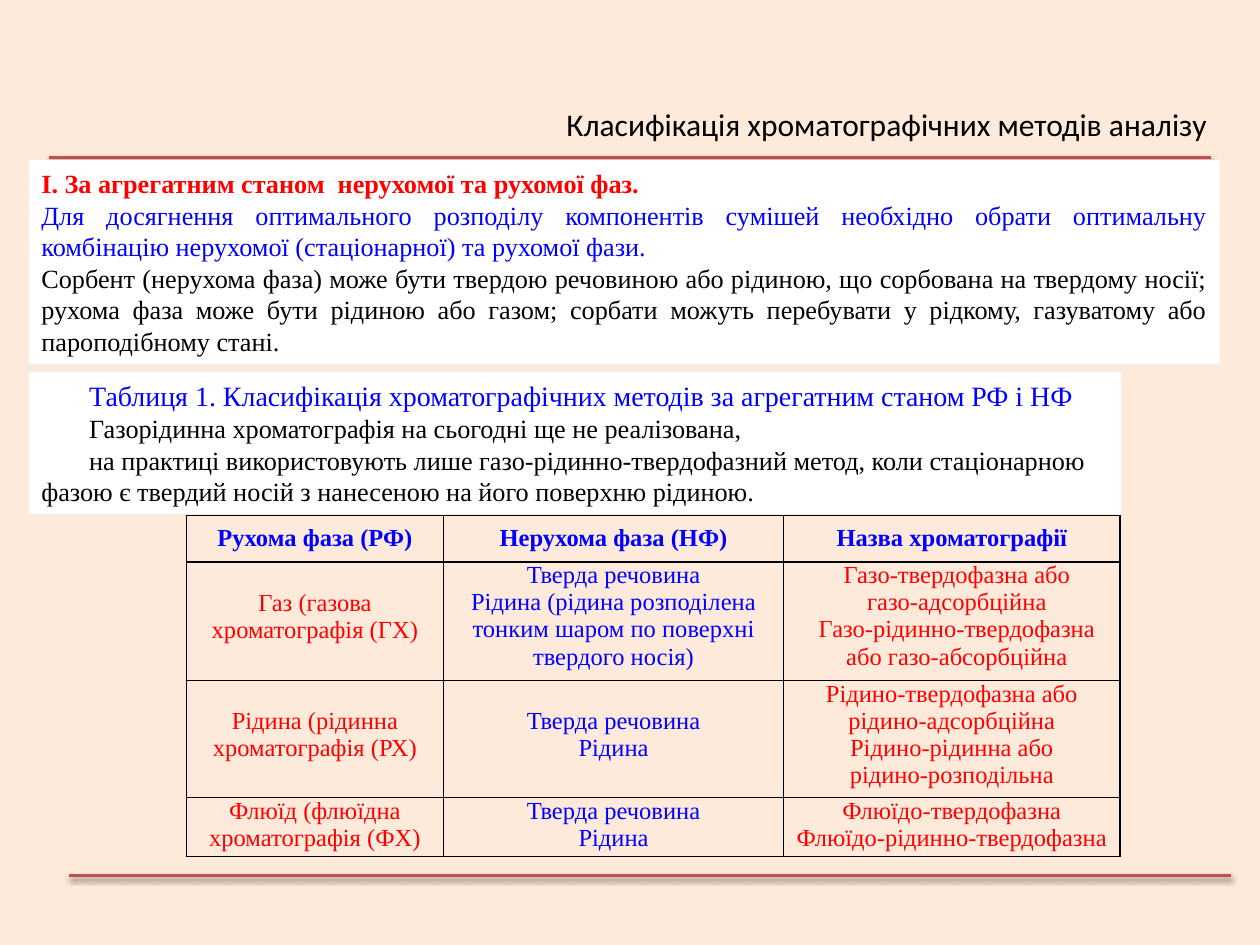
from pptx import Presentation
from pptx.dml.color import RGBColor
from pptx.enum.shapes import MSO_CONNECTOR, MSO_SHAPE
from pptx.enum.text import MSO_ANCHOR, MSO_AUTO_SIZE, PP_ALIGN
from pptx.oxml import parse_xml
from pptx.oxml.ns import nsdecls
from pptx.util import Inches, Pt

RED, BLUE, BLACK, WHITE = "FF0000", "0000FF", "000000", "FFFFFF"
SERIF = "Times New Roman"


def rgb(value):
    return RGBColor.from_string(value)


def write(p, text, size=14, color=BLACK, bold=False, font=SERIF,
          align=PP_ALIGN.LEFT, left=0, indent=0):
    p.alignment = align
    pPr = p._p.get_or_add_pPr()
    pPr.set("marL", str(Inches(left)))
    pPr.set("indent", str(Inches(indent)))
    p.text = text
    for r in p.runs:
        r.font.name = font
        r.font.size = Pt(size)
        r.font.bold = bold
        r.font.color.rgb = rgb(color)


def fill_frame(tf, lines, **style):
    for i, (text, extra) in enumerate(lines):
        p = tf.paragraphs[0] if i == 0 else tf.add_paragraph()
        write(p, text, **{**style, **extra})


class Deck:
    accent = "C0504D"
    background = "FDEADA"

    def __init__(self, prs):
        self.s = prs.slides.add_slide(prs.slide_layouts[5])
        fill = self.s.background.fill
        fill.solid()
        fill.fore_color.rgb = rgb(self.background)

    def title(self, text, x, y, w, h):
        sp = self.s.shapes.title
        sp.left, sp.top, sp.width, sp.height = map(Inches, (x, y, w, h))
        tf = sp.text_frame
        tf.word_wrap = True
        tf.auto_size = MSO_AUTO_SIZE.NONE
        tf.vertical_anchor = MSO_ANCHOR.TOP
        write(tf.paragraphs[0], text, size=18, font="Calibri", align=PP_ALIGN.RIGHT)

    def rule(self, x, y, w):
        line = self.s.shapes.add_connector(
            MSO_CONNECTOR.STRAIGHT, Inches(x), Inches(y), Inches(x + w), Inches(y))
        line.line.color.rgb = rgb(self.accent)
        line.line.width = Pt(2)
        line._element.spPr.append(parse_xml(
            f'<a:effectLst {nsdecls("a")}>'
            f'<a:outerShdw blurRad="{Pt(3.1)}" dist="{Pt(1.6)}" dir="5400000" rotWithShape="0">'
            '<a:srgbClr val="000000"><a:alpha val="38000"/></a:srgbClr>'
            '</a:outerShdw></a:effectLst>'))

    def panel(self, lines, x, y, w, h, **style):
        sp = self.s.shapes.add_shape(
            MSO_SHAPE.RECTANGLE, Inches(x), Inches(y), Inches(w), Inches(h))
        sp.shadow.inherit = False
        sp.fill.solid()
        sp.fill.fore_color.rgb = rgb(WHITE)
        sp.line.fill.background()
        tf = sp.text_frame
        tf.word_wrap = True
        tf.vertical_anchor = MSO_ANCHOR.MIDDLE
        fill_frame(tf, lines, **style)

    def cell(self, cell, lines, color, bold=False, side=0.07, top=0):
        cell.fill.background()
        cell.margin_left = cell.margin_right = Inches(side)
        cell.margin_top, cell.margin_bottom = Inches(top), 0
        cell.vertical_anchor = MSO_ANCHOR.MIDDLE if bold else MSO_ANCHOR.TOP
        fill_frame(cell.text_frame, lines, color=color, bold=bold, align=PP_ALIGN.CENTER)
        tcPr = cell._tc.get_or_add_tcPr()
        for i, edge in enumerate(("lnL", "lnR", "lnT", "lnB")):
            tcPr.insert(i, parse_xml(
                f'<a:{edge} {nsdecls("a")} w="{Pt(1)}"><a:solidFill>'
                f'<a:srgbClr val="{BLACK}"/></a:solidFill></a:{edge}>'))

    def table(self, rows, x, y, widths, heights):
        table = self.s.shapes.add_table(
            len(rows), len(widths), Inches(x), Inches(y),
            Inches(sum(widths)), Inches(sum(heights))).table
        for col, width in zip(table.columns, widths):
            col.width = Inches(width)
        for row, height in zip(table.rows, heights):
            row.height = Inches(height)
        for i, row in enumerate(rows):
            for j, (lines, extra) in enumerate(row):
                color = BLUE if i == 0 or j == 1 else RED
                self.cell(table.cell(i, j), lines, color, bold=i == 0, **extra)


def entry(*texts, **extra):
    return [t if isinstance(t, tuple) else (t, {}) for t in texts], extra


def main():
    prs = Presentation()
    prs.slide_width, prs.slide_height = Inches(10), Inches(7.5)
    deck = Deck(prs)
    deck.rule(0.55, 6.95, 9.22)
    deck.rule(0.39, 1.25, 9.22)
    deck.title("Класифікація хроматографічних методів аналізу", 3.59, 0.78, 6.09, 0.4)
    deck.panel([
        ("І. За агрегатним станом  нерухомої та рухомої фаз.", {"color": RED, "bold": True}),
        ("Для досягнення оптимального розподілу компонентів сумішей необхідно обрати "
         "оптимальну комбінацію нерухомої (стаціонарної) та рухомої фази.", {"color": BLUE}),
        ("Сорбент (нерухома фаза) може бути твердою речовиною або рідиною, що сорбована "
         "на твердому носії; рухома фаза може бути рідиною або газом; сорбати можуть "
         "перебувати у рідкому, газуватому або пароподібному стані.", {}),
    ], 0.23, 1.27, 9.45, 1.62, size=15, align=PP_ALIGN.JUSTIFY)

    blank_line = 0.22
    deck.table([
        [entry("Рухома фаза (РФ)"), entry("Нерухома фаза (НФ)"), entry("Назва хроматографії")],
        [entry("Газ (газова хроматографія (ГХ)", top=blank_line),
         entry("Тверда речовина",
               "Рідина (рідина розподілена тонким шаром по поверхні твердого носія)"),
         entry(("Газо-твердофазна або", {"indent": 0.08}),
               ("газо-адсорбційна", {"indent": 0.08}),
               ("Газо-рідинно-твердофазна\vабо газо-абсорбційна", {"left": 0.08}),
               side=0.02)],
        [entry("Рідина (рідинна хроматографія (РХ)", top=blank_line),
         entry("Тверда речовина", "Рідина", top=blank_line),
         entry("Рідино-твердофазна або", "рідино-адсорбційна",
               "Рідино-рідинна або", "рідино-розподільна")],
        [entry("Флюїд (флюїдна хроматографія (ФХ)"),
         entry("Тверда речовина", "Рідина"),
         entry("Флюїдо-твердофазна", "Флюїдо-рідинно-твердофазна")],
    ], 1.48, 4.09, (2.04, 2.7, 2.67), (0.37, 0.94, 0.93, 0.47))

    deck.panel([
        ("Таблиця 1. Класифікація хроматографічних методів за агрегатним станом РФ і НФ",
         {"size": 16, "color": BLUE}),
        ("Газорідинна хроматографія на сьогодні ще не реалізована,", {}),
        ("на практиці використовують лише газо-рідинно-твердофазний метод, коли "
         "стаціонарною фазою є твердий носій з нанесеною на його поверхню рідиною.", {}),
    ], 0.23, 2.95, 8.67, 1.13, size=15, indent=0.38)
    prs.save("out.pptx")


if __name__ == "__main__":
    main()
